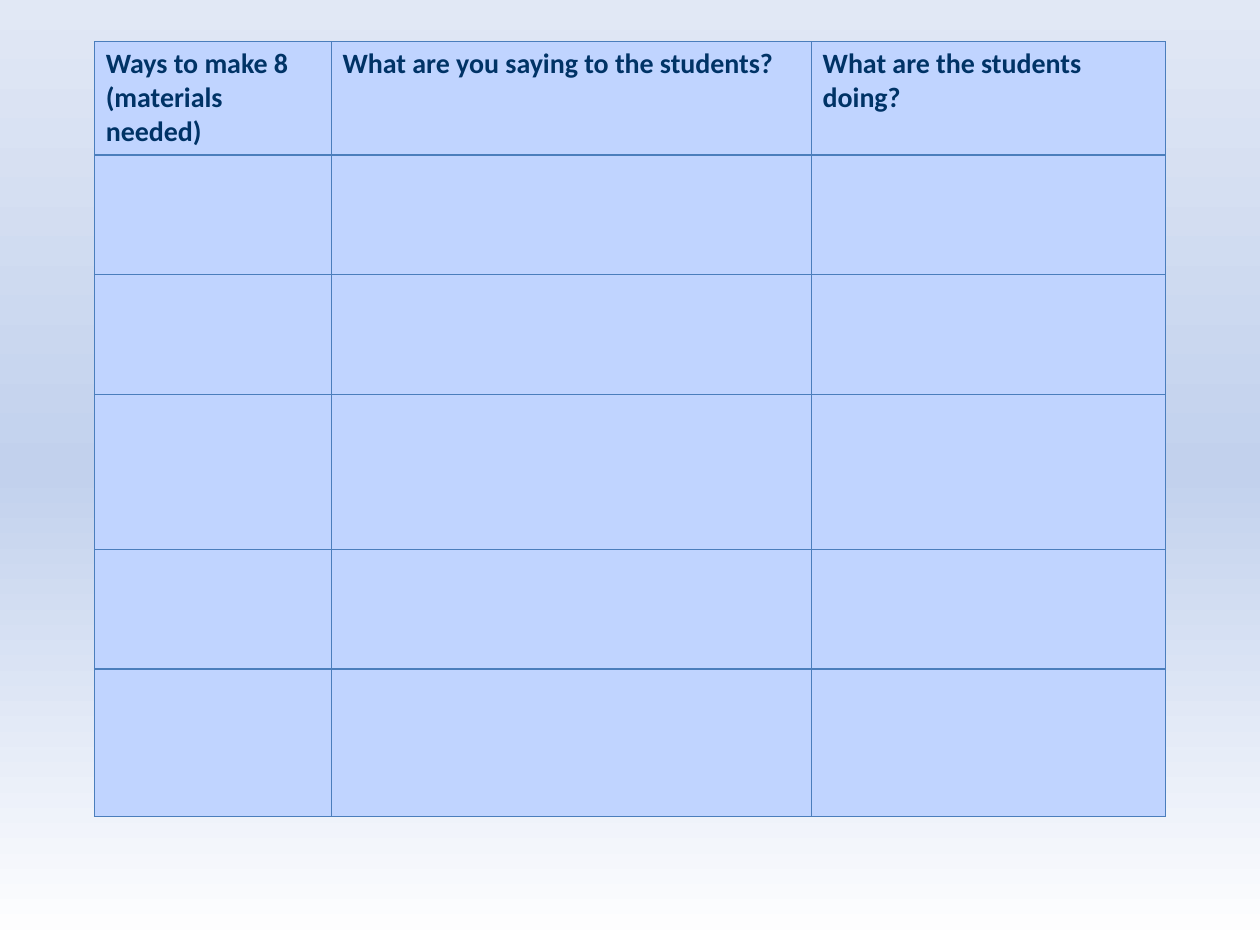
import copy

import pptx
import pptx.dml.color
import pptx.oxml
import pptx.oxml.ns
import pptx.util

HEADINGS = [
    "Ways to make 8\n(materials needed)",
    "What are you saying to the students?",
    "What are the students doing?",
]
COLUMNS = [1.88, 3.81, 2.81]
ROWS = [0.9, 0.95, 0.95, 1.23, 0.95, 1.17]
LEFT, TOP = 0.75, 0.33
BACKGROUND = [(0, "FFFFFF"), (0.5, "C2D1ED"), (1, "E1E8F5")]
CELL_FILL, BORDER, INK = "C0D4FF", "4B7EBC", "003366"
FONT, SIZE, BORDER_WIDTH = "Calibri", 16, 0.75


def rgb(value):
    return pptx.dml.color.RGBColor.from_string(value)


def paint_background(slide):
    fill = slide.background.fill
    fill.gradient()
    fill.gradient_angle = 90
    stops = fill._fill._gradFill.find(pptx.oxml.ns.qn("a:gsLst"))
    stops.append(copy.deepcopy(stops[0]))
    for stop, (position, color) in zip(fill.gradient_stops, BACKGROUND):
        stop.position = position
        stop.color.rgb = rgb(color)


def add_borders(cell):
    """Outline all four sides; border elements must precede the cell fill."""
    props = cell._tc.get_or_add_tcPr()
    for i, side in enumerate(("lnL", "lnR", "lnT", "lnB")):
        props.insert(i, pptx.oxml.parse_xml(
            f'<a:{side} {pptx.oxml.ns.nsdecls("a")} w="{pptx.util.Pt(BORDER_WIDTH)}">'
            f'<a:solidFill><a:srgbClr val="{BORDER}"/></a:solidFill></a:{side}>'))


def format_cell(cell):
    cell.fill.solid()
    cell.fill.fore_color.rgb = rgb(CELL_FILL)
    cell.margin_left = cell.margin_right = pptx.util.Inches(0.09)
    cell.margin_top = cell.margin_bottom = pptx.util.Inches(0.04)
    add_borders(cell)


def write_heading(cell, text):
    cell.text_frame.text = text
    for p in cell.text_frame.paragraphs:
        for r in p.runs:
            r.font.name, r.font.size, r.font.bold = FONT, pptx.util.Pt(SIZE), True
            r.font.color.rgb = rgb(INK)


def add_planning_table(slide):
    box = [pptx.util.Inches(v) for v in (LEFT, TOP, sum(COLUMNS), sum(ROWS))]
    table = slide.shapes.add_table(len(ROWS), len(COLUMNS), *box).table
    table.horz_banding = False
    for column, width in zip(table.columns, COLUMNS):
        column.width = pptx.util.Inches(width)
    for row, height in zip(table.rows, ROWS):
        row.height = pptx.util.Inches(height)
    for cell in table.iter_cells():
        format_cell(cell)
    for cell, text in zip(table.rows[0].cells, HEADINGS):
        write_heading(cell, text)


def main():
    prs = pptx.Presentation()
    prs.slide_width, prs.slide_height = pptx.util.Inches(10), pptx.util.Inches(7.5)
    slide = prs.slides.add_slide(prs.slide_layouts[6])
    paint_background(slide)
    add_planning_table(slide)
    prs.save("out.pptx")


if __name__ == "__main__":
    main()
